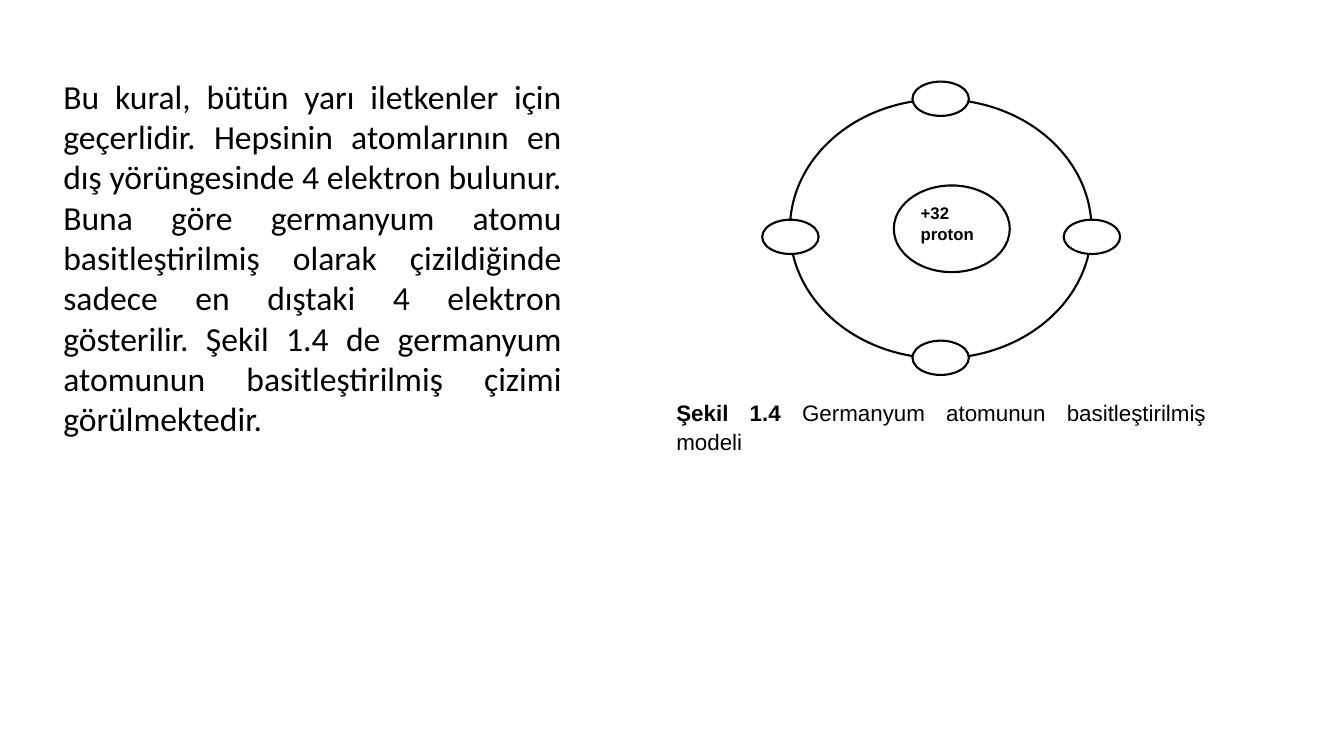
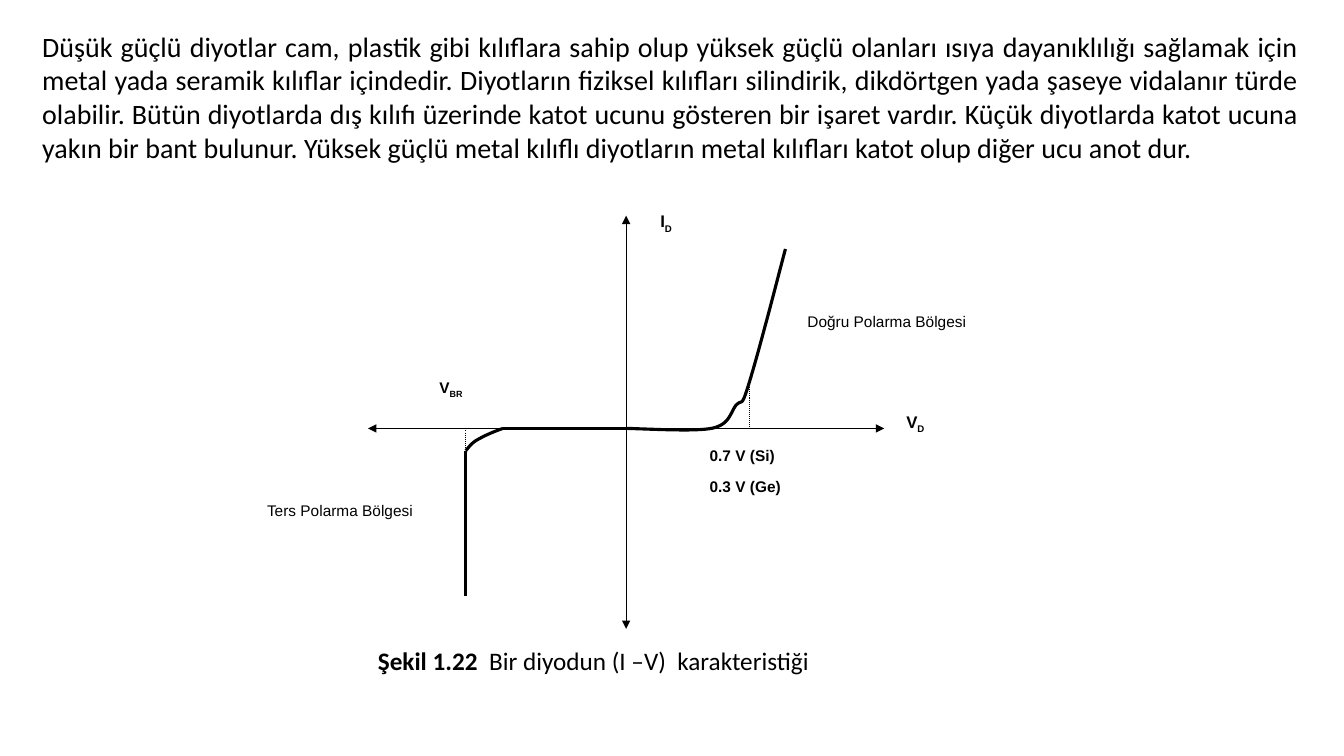
from lxml.etree import SubElement
from pptx import Presentation
from pptx.dml.color import RGBColor
from pptx.enum.dml import MSO_LINE
from pptx.enum.shapes import MSO_CONNECTOR, MSO_SHAPE
from pptx.enum.text import MSO_ANCHOR, PP_ALIGN
from pptx.oxml.ns import qn
from pptx.util import Inches, Pt

INK = "000000"
PAPER = "FFFFFF"
BODY_FONT = "Calibri"
FIGURE_FONT = "Arial"
LEFT, JUSTIFY = PP_ALIGN.LEFT, PP_ALIGN.JUSTIFY


def write(frame, paragraphs, font, size, align=LEFT, spacing=1.0, after=0):
    frame.word_wrap = True
    frame.vertical_anchor = MSO_ANCHOR.TOP
    for index, pieces in enumerate(paragraphs):
        paragraph = frame.paragraphs[0] if index == 0 else frame.add_paragraph()
        paragraph.alignment = align
        paragraph.line_spacing = spacing
        paragraph.space_after = Pt(after)
        for text, bold, subscript in pieces:
            run = paragraph.add_run()
            run.text = text
            run.font.name = font
            run.font.size = Pt(size)
            run.font.bold = bold
            run.font.color.rgb = RGBColor.from_string(INK)
            if subscript:
                run._r.get_or_add_rPr().set("baseline", "-25000")


def add_oval(slide, center_x, center_y, width, height):
    oval = slide.shapes.add_shape(
        MSO_SHAPE.OVAL, Inches(center_x - width / 2), Inches(center_y - height / 2),
        Inches(width), Inches(height))
    oval.shadow.inherit = False
    oval.fill.solid()
    oval.fill.fore_color.rgb = RGBColor.from_string(PAPER)
    oval.line.color.rgb = RGBColor.from_string(INK)
    oval.line.width = Pt(1.5)
    return oval


deck = Presentation()
deck.slide_width = Inches(13.33)
deck.slide_height = Inches(7.5)
blank = deck.slide_layouts[6]

atom = deck.slides.add_slide(blank)
rule = atom.shapes.add_textbox(Inches(0.53), Inches(0.7), Inches(5.14), Inches(3.92))
write(rule.text_frame, [[(
    "Bu kural, bütün yarı iletkenler için geçerlidir. Hepsinin atomlarının en dış "
    "yörüngesinde 4 elektron bulunur. Buna göre germanyum atomu basitleştirilmiş olarak "
    "çizildiğinde sadece en dıştaki 4 elektron gösterilir. Şekil 1.4 de germanyum "
    "atomunun basitleştirilmiş çizimi görülmektedir.", False, False)]],
    BODY_FONT, 24, JUSTIFY, after=8)

add_oval(atom, 9.33, 2.27, 2.99, 2.57)
nucleus = add_oval(atom, 9.44, 2.27, 1.15, 0.86)
write(nucleus.text_frame, [[("+32", True, False)], [("proton", True, False)]],
      FIGURE_FONT, 12, JUSTIFY)
for electron_x, electron_y in [(9.33, 3.55), (9.33, 0.98), (7.84, 2.35), (10.83, 2.35)]:
    add_oval(atom, electron_x, electron_y, 0.56, 0.34)

atom_caption = atom.shapes.add_textbox(Inches(6.61), Inches(3.89), Inches(5.45), Inches(0.62))
write(atom_caption.text_frame, [[
    ("Şekil 1.4 ", True, False),
    ("Germanyum atomunun basitleştirilmiş modeli", False, False)]],
    FIGURE_FONT, 16, JUSTIFY, 1.07, 8)

diode = deck.slides.add_slide(blank)
packages = diode.shapes.add_textbox(Inches(0.32), Inches(0.24), Inches(12.66), Inches(1.45))
write(packages.text_frame, [[(
    "Düşük güçlü diyotlar cam, plastik gibi kılıflara sahip olup yüksek güçlü olanları "
    "ısıya dayanıklılığı sağlamak için metal yada seramik kılıflar içindedir. Diyotların "
    "fiziksel kılıfları silindirik, dikdörtgen yada şaseye vidalanır türde olabilir. Bütün "
    "diyotlarda dış kılıfı üzerinde katot ucunu gösteren bir işaret vardır. Küçük "
    "diyotlarda katot ucuna yakın bir bant bulunur. Yüksek güçlü metal kılıflı diyotların "
    "metal kılıfları katot olup diğer ucu anot dur.", False, False)]],
    BODY_FONT, 20, JUSTIFY)

origin_x, origin_y = 6.21, 4.25
breakdown_x, knee_x = 4.62, 7.43
graph_lines = [
    (3.65, origin_y, 8.77, origin_y, 0.75, "axis"),
    (origin_x, 6.24, origin_x, 2.14, 0.75, "axis"),
    (origin_x, origin_y, 4.99, origin_y, 2.25, "curve"),
    (breakdown_x, 4.47, breakdown_x, 5.91, 2.25, "curve"),
    (breakdown_x, origin_y, breakdown_x, 4.47, 0.75, "guide"),
    (knee_x, 3.8, knee_x, origin_y, 0.75, "guide"),
]
for start_x, start_y, end_x, end_y, weight, role in graph_lines:
    stroke = diode.shapes.add_connector(
        MSO_CONNECTOR.STRAIGHT, Inches(start_x), Inches(start_y), Inches(end_x), Inches(end_y))
    stroke.line.color.rgb = RGBColor.from_string(INK)
    stroke.line.width = Pt(weight)
    if role == "guide":
        stroke.line.dash_style = MSO_LINE.ROUND_DOT
    if role == "axis":
        for end in ("a:headEnd", "a:tailEnd"):
            SubElement(stroke.line._get_or_add_ln(), qn(end), type="triangle")
    SubElement(stroke._element.spPr, qn("a:effectLst"))

reverse_bend = [(4.99, 4.25), (4.9, 4.28), (4.81, 4.32), (4.74, 4.36),
                (4.68, 4.39), (4.64, 4.45), (4.62, 4.47)]
forward_curve = [(6.21, 4.25), (6.54, 4.26), (6.88, 4.28), (7.06, 4.25),
                 (7.24, 4.21), (7.24, 4.1), (7.3, 4.02),
                 (7.37, 3.95), (7.35, 4.06), (7.43, 3.8),
                 (7.51, 3.54), (7.65, 3.01), (7.79, 2.47)]
STEPS = 16
for controls in (reverse_bend, forward_curve):
    points = []
    for first in range(0, len(controls) - 1, 3):
        for step in range(1, STEPS + 1):
            t = step / STEPS
            weights = ((1 - t) ** 3, 3 * t * (1 - t) ** 2, 3 * t ** 2 * (1 - t), t ** 3)
            segment = controls[first:first + 4]
            points.append(tuple(
                Inches(sum(w * point[axis] for w, point in zip(weights, segment)))
                for axis in (0, 1)))
    start_x, start_y = controls[0]
    builder = diode.shapes.build_freeform(Inches(start_x), Inches(start_y))
    builder.add_line_segments(points, close=False)
    characteristic = builder.convert_to_shape()
    characteristic.shadow.inherit = False
    characteristic.fill.background()
    characteristic.line.color.rgb = RGBColor.from_string(INK)
    characteristic.line.width = Pt(2.25)

graph_labels = [
    (8.89, 4.02, 0.61, 0.44, 12, [[("V", True, False), ("D", True, True)]]),
    (6.45, 2.03, 0.61, 0.44, 12, [[("I", True, False), ("D", True, True)]]),
    (6.94, 4.36, 1.22, 0.55, 11, [[("0.7 V (Si)", True, False)], [("0.3 V (Ge)", True, False)]]),
    (4.26, 3.69, 0.61, 0.44, 11, [[("V", True, False), ("BR", True, True)]]),
    (2.55, 4.91, 1.95, 0.44, 11, [[("Ters Polarma Bölgesi", False, False)]]),
    (7.91, 3.03, 2.07, 0.44, 11, [[("Doğru Polarma Bölgesi", False, False)]]),
]
for left, top, width, height, size, paragraphs in graph_labels:
    label = diode.shapes.add_textbox(Inches(left), Inches(top), Inches(width), Inches(height))
    write(label.text_frame, paragraphs, FIGURE_FONT, size, spacing=1.07, after=8)

diode_caption = diode.shapes.add_textbox(Inches(3.65), Inches(6.35), Inches(5.45), Inches(0.71))
write(diode_caption.text_frame, [[
    ("Şekil 1.22  ", True, False),
    ("Bir diyodun (I –V)  karakteristiği", False, False)]], BODY_FONT, 18)

deck.save("out.pptx")
